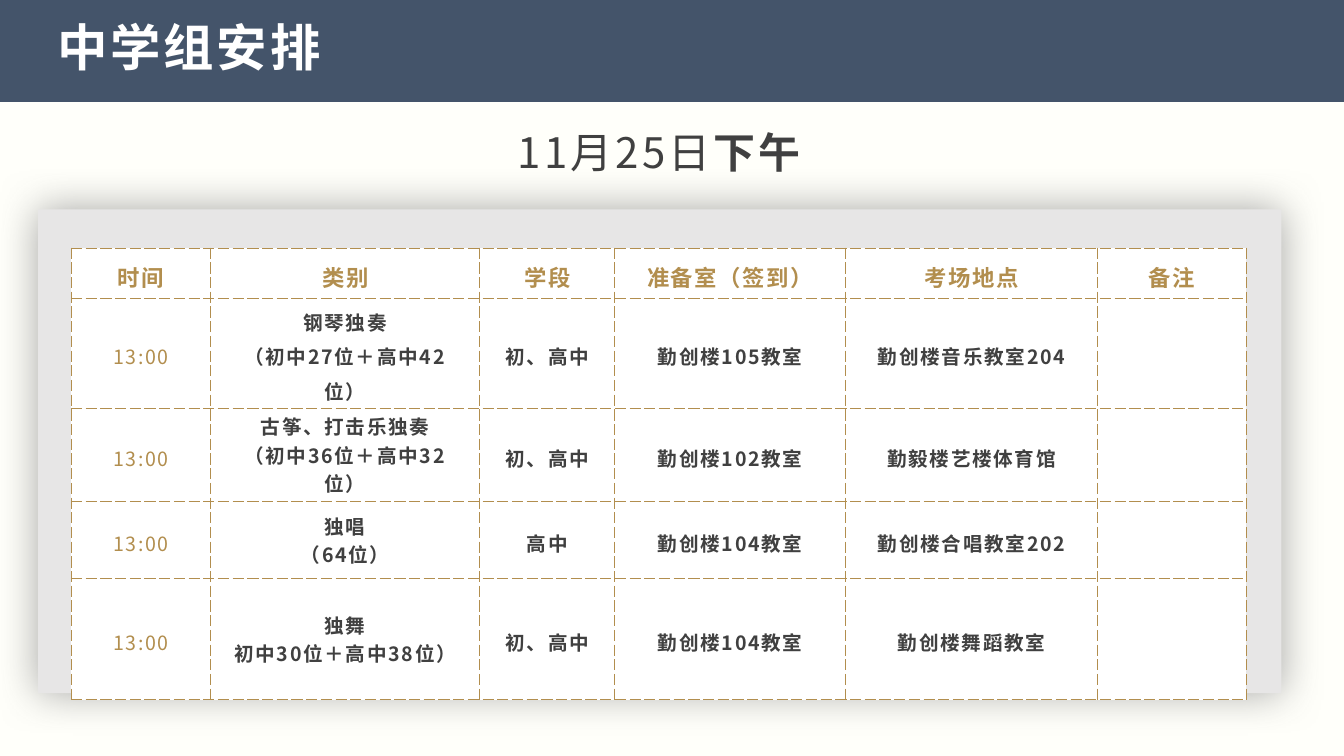
import pptx
import pptx.dml.color
import pptx.enum.shapes
import pptx.enum.text
import pptx.oxml
import pptx.oxml.ns
import pptx.util
from lxml import etree

Pt = pptx.util.Pt
qn = pptx.oxml.ns.qn
ALIGN = pptx.enum.text.PP_ALIGN
MIDDLE = pptx.enum.text.MSO_ANCHOR.MIDDLE

# Content
TITLE = "中学组安排"
DATE = [("11月25日", False), ("下午", True)]
HEADERS = ["时间", "类别", "学段", "准备室（签到）", "考场地点", "备注"]
SESSIONS = [
    ("13:00", "钢琴独奏\n（初中27位＋高中42位）", "初、高中", "勤创楼105教室", "勤创楼音乐教室204", ""),
    ("13:00", "古筝、打击乐独奏\n（初中36位＋高中32位）", "初、高中", "勤创楼102教室", "勤毅楼艺楼体育馆", ""),
    ("13:00", "独唱\n（64位）", "高中", "勤创楼104教室", "勤创楼合唱教室202", ""),
    ("13:00", "独舞\n初中30位＋高中38位）", "初、高中", "勤创楼104教室", "勤创楼舞蹈教室", ""),
]
COL_WIDTHS = [99.4, 192.4, 96.4, 164.9, 180, 106.2]
ROW_HEIGHTS = [36, 59, 59, 55.4, 86.4]

# Style
FONT = "Noto Sans CJK SC"
NAVY, GREY, CREAM, WHITE = "44546A", "E7E6E6", "FFFFFA", "FFFFFF"
GOLD, DARK, SHADOW = "B28E4E", "404040", "808080"


def rgb(value):
    return pptx.dml.color.RGBColor.from_string(value)


def style(p, size, color, bold, spacing, align, line=None):
    p.alignment = align
    if line:
        p.line_spacing = line
    f = p.font
    f.size, f.bold, f.name = Pt(size), bold, FONT
    f.color.rgb = rgb(color)
    props = p._p.pPr.find(qn("a:defRPr"))
    props.set("spc", str(round(spacing * 100)))
    props.find(qn("a:latin")).addnext(
        etree.Element(qn("a:ea"), typeface=FONT))


def frame(tf):
    tf.word_wrap = True
    tf.auto_size = pptx.enum.text.MSO_AUTO_SIZE.NONE
    tf.vertical_anchor = MIDDLE
    tf.margin_left = tf.margin_right = Pt(5)
    tf.margin_top = tf.margin_bottom = Pt(2.5)


def rect(slide, x, y, w, h, color):
    sp = slide.shapes.add_shape(
        pptx.enum.shapes.MSO_SHAPE.RECTANGLE, Pt(x), Pt(y), Pt(w), Pt(h))
    sp.fill.solid()
    sp.fill.fore_color.rgb = rgb(color)
    sp.line.fill.background()
    sp.shadow.inherit = False
    return sp


def add_glow(sp):
    effects = sp.element.spPr.find(qn("a:effectLst"))
    shadow = etree.SubElement(
        effects, qn("a:outerShdw"), blurRad=str(Pt(30)), dist="0",
        dir="5400000", algn="ctr", rotWithShape="0")
    color = etree.SubElement(shadow, qn("a:srgbClr"), val=SHADOW)
    etree.SubElement(color, qn("a:alpha"), val="70000")


def add_borders(cell):
    props = cell._tc.get_or_add_tcPr()
    for side in ("lnL", "lnR", "lnT", "lnB"):
        ln = etree.SubElement(props, qn("a:" + side), w=str(Pt(0.75)))
        fill = etree.SubElement(ln, qn("a:solidFill"))
        etree.SubElement(fill, qn("a:srgbClr"), val=GOLD)
        etree.SubElement(ln, qn("a:prstDash"), val="dash")


def fill_cell(cell, text, row, col):
    add_borders(cell)
    cell.fill.solid()
    cell.fill.fore_color.rgb = rgb(WHITE)
    cell.vertical_anchor = MIDDLE
    cell.margin_left = cell.margin_right = Pt(13.5)
    cell.margin_top = cell.margin_bottom = Pt(2.5)
    cell.text = text
    header, time = row == 0, col == 0
    tight = col == 1 and row > 1
    for p in cell.text_frame.paragraphs:
        style(p, 16 if header else 14, GOLD if header or time else DARK,
              header or not time, 1.2, ALIGN.CENTER, 1.0 if tight else 1.2)


def main():
    prs = pptx.Presentation()
    prs.slide_width, prs.slide_height = Pt(960), Pt(540)
    slide = prs.slides.add_slide(prs.slide_layouts[5])
    slide.background.fill.solid()
    slide.background.fill.fore_color.rgb = rgb(CREAM)

    # Header band and panel, behind the title
    title = slide.shapes.title
    band = rect(slide, 0, 0, 960, 72.7, NAVY)
    panel = rect(slide, 27.2, 149.6, 888, 345.6, GREY)
    add_glow(panel)
    for sp in (band, panel):
        title.element.addprevious(sp.element)

    # Title
    title.left, title.top, title.width, title.height = map(Pt, (36, 12, 888, 48))
    title.text = TITLE
    frame(title.text_frame)
    style(title.text_frame.paragraphs[0], 36, WHITE, True, 2, ALIGN.LEFT, 0.9)

    # Timetable
    table = slide.shapes.add_table(
        len(ROW_HEIGHTS), len(COL_WIDTHS), Pt(51), Pt(177.2),
        Pt(sum(COL_WIDTHS)), Pt(sum(ROW_HEIGHTS))).table
    table.first_row = table.horz_banding = False
    for column, width in zip(table.columns, COL_WIDTHS):
        column.width = Pt(width)
    for row, height in zip(table.rows, ROW_HEIGHTS):
        row.height = Pt(height)
    for i, texts in enumerate([HEADERS] + SESSIONS):
        for j, text in enumerate(texts):
            fill_cell(table.cell(i, j), text, i, j)

    # Date line
    date = slide.shapes.add_textbox(Pt(51), Pt(72.7), Pt(840), Pt(71.3))
    frame(date.text_frame)
    p = date.text_frame.paragraphs[0]
    p.space_after = Pt(8)
    style(p, 30, DARK, False, 2.2, ALIGN.CENTER)
    for text, bold in DATE:
        r = p.add_run()
        r.text = text
        r.font.bold = bold

    prs.save("out.pptx")


if __name__ == "__main__":
    main()
